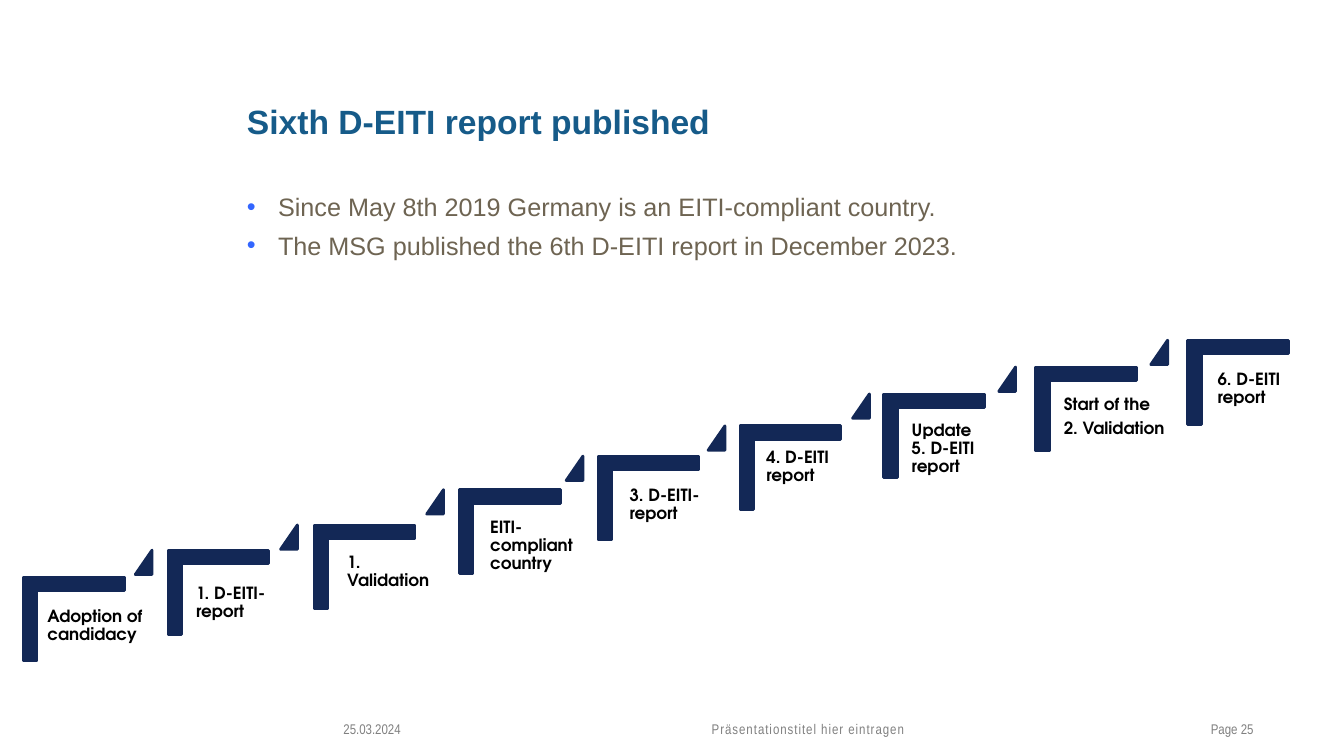
"""Build the slide that shows the D-EITI milestones as a rising staircase."""
from lxml import etree
from pptx import Presentation
from pptx import util as u
from pptx.dml.color import RGBColor
from pptx.enum import shapes, text
from pptx.oxml import ns

COLUMNS, ROWS = 160, 90
COLORS = {
    "navy": "132856", "title": "165B89", "body": "6E6452",
    "bullet": "3366FF", "label": "000000", "footer": "808080",
}
RUN, RISE, TREAD = 10, 12, 0.161
LABEL_HEIGHT = 13.1

# step column and row, arrow gap, label offset (columns, rows), label width, label
STEPS = [
    (2.8, 68.7, None, (2, 2.8), 13.6, "Adoption of candidacy"),
    (20, 65.5, 3.9, (2.5, 3.3), 12, "1. D-EITI-report"),
    (37.4, 62.5, 4, (3.1, 2.6), 13.4, "1. Validation"),
    (54.7, 58.3, 3.9, (2.8, 2.6), 15.1, "EITI-compliant country"),
    (71.2, 54.3, 3.8, (2.9, 2.8), 13.9, "3. D-EITI-report"),
    (88.1, 50.7, 3.8, (2.3, 1.9), 13.9, "4. D-EITI report"),
    (105.2, 46.9, 3.7, (2.5, 2.5), 10.2, "Update 5. D-EITI report"),
    (123.3, 43.7, 4.4, (2.5, 2.6), 14.5, "Start of the\n2. Validation"),
    (141.4, 40.5, 4.4, (2.7, 2.8), 13.9, "6. D-EITI report"),
]
FACTS = [
    "Since May 8th 2019 Germany is an EITI-compliant country.",
    "The MSG published the 6th D-EITI report in December 2023.",
]
FOOTERS = [
    (39.7, 13.9, "25.03.2024", text.PP_ALIGN.LEFT, 0),
    (56, 80.4, "Präsentationstitel hier eintragen", text.PP_ALIGN.CENTER, 0.7),
    (138.4, 12, "Page 25", text.PP_ALIGN.RIGHT, 0),
]


class StairPage:
    """Hold the style and the current slide, and add elements on its grid."""

    def __init__(self, deck):
        """Add a title-only slide to the deck."""
        self.column = deck.slide_width / COLUMNS
        self.row = deck.slide_height / ROWS
        self.page = deck.slides.add_slide(deck.slide_layouts[5])

    def place(self, left, top, width, height):
        """Turn grid units into slide lengths."""
        return (u.Emu(round(left * self.column)), u.Emu(round(top * self.row)),
                u.Emu(round(width * self.column)), u.Emu(round(height * self.row)))

    def style(self, box, font, size, color, bold=False):
        """Format every run in a box."""
        for para in box.text_frame.paragraphs:
            for span in para.runs:
                span.font.name = font
                span.font.size = u.Pt(size)
                span.font.bold = bold
                span.font.color.rgb = RGBColor.from_string(COLORS[color])

    def title(self, words, *area):
        """Fill and move the title placeholder."""
        box = self.page.shapes.title
        box.left, box.top, box.width, box.height = self.place(*area)
        frame = box.text_frame
        frame.text = words
        frame.auto_size = text.MSO_AUTO_SIZE.NONE
        frame.vertical_anchor = text.MSO_ANCHOR.TOP
        frame.paragraphs[0].alignment = text.PP_ALIGN.LEFT
        self.style(box, "Arial", 24, "title", True)

    def textbox(self, words, *area):
        """Add a wrapping text box."""
        box = self.page.shapes.add_textbox(*self.place(*area))
        box.text_frame.word_wrap = True
        box.text_frame.text = words
        return box

    def bullets(self, items, *area):
        """Add a bulleted list."""
        box = self.textbox("\n".join(items), *area)
        for para in box.text_frame.paragraphs:
            props = para._p.get_or_add_pPr()
            indent = u.Inches(0.31)
            props.set("marL", str(indent))
            props.set("indent", str(-indent))
            color = etree.SubElement(props, ns.qn("a:buClr"))
            etree.SubElement(color, ns.qn("a:srgbClr"), val=COLORS["bullet"])
            etree.SubElement(props, ns.qn("a:buFont"), typeface="Arial")
            etree.SubElement(props, ns.qn("a:buChar"), char="•")
            para.space_after = u.Pt(6)
        self.style(box, "Arial", 18, "body")

    def solid(self, kind, adjustments, *area):
        """Add a navy preset shape."""
        shape = self.page.shapes.add_shape(kind, *self.place(*area))
        for index, value in enumerate(adjustments):
            shape.adjustments[index] = value
        navy = RGBColor.from_string(COLORS["navy"])
        shape.shadow.inherit = False
        shape.fill.solid()
        shape.fill.fore_color.rgb = navy
        shape.line.color.rgb = navy
        shape.line.width = u.Pt(2)
        return shape

    def step(self, left, top):
        """Add a stair corner whose turned outline starts at left and top."""
        shift = (RISE - RUN) / 2
        corner = self.solid(shapes.MSO_SHAPE.CORNER, (TREAD, TREAD),
                            left + shift, top - shift, RUN, RISE)
        corner.rotation = 90

    def arrow(self, left, top):
        """Add the small triangle that leads up to a step."""
        self.solid(shapes.MSO_SHAPE.ISOSCELES_TRIANGLE, (1,), left, top, 2, 2.9)

    def label(self, words, *area):
        """Add the bold label under a step."""
        box = self.textbox(words, *area)
        frame = box.text_frame
        frame.margin_left = frame.margin_right = u.Inches(0.07)
        frame.margin_top = frame.margin_bottom = u.Inches(0.07)
        for para in frame.paragraphs:
            para.line_spacing = 0.9
            para.space_after = u.Pt(4.2)
        self.style(box, "TeX Gyre Adventor", 12, "label", True)

    def footer(self, left, width, words, alignment, spacing):
        """Add one part of the footer line."""
        box = self.textbox(words, left, 85.2, width, 3.2)
        para = box.text_frame.paragraphs[0]
        para.alignment = alignment
        self.style(box, "Arial Narrow", 10, "footer")
        if spacing:
            para.runs[0].font._element.set("spc", str(round(spacing * 100)))


def main():
    """Build and save the deck."""
    deck = Presentation()
    deck.slide_width, deck.slide_height = u.Inches(13.33), u.Inches(7.5)
    stairs = StairPage(deck)
    stairs.title("Sixth D-EITI report published", 28.2, 11.4, 103.6, 8.2)
    stairs.bullets(FACTS, 28.2, 22.2, 103.7, 17.5)
    for left, top, gap, (across, down), width, words in STEPS:
        if gap:
            stairs.arrow(left - gap, top)
        stairs.step(left, top)
        stairs.label(words, left + across, top + down, width, LABEL_HEIGHT)
    for part in FOOTERS:
        stairs.footer(*part)
    deck.save("out.pptx")


if __name__ == "__main__":
    main()
